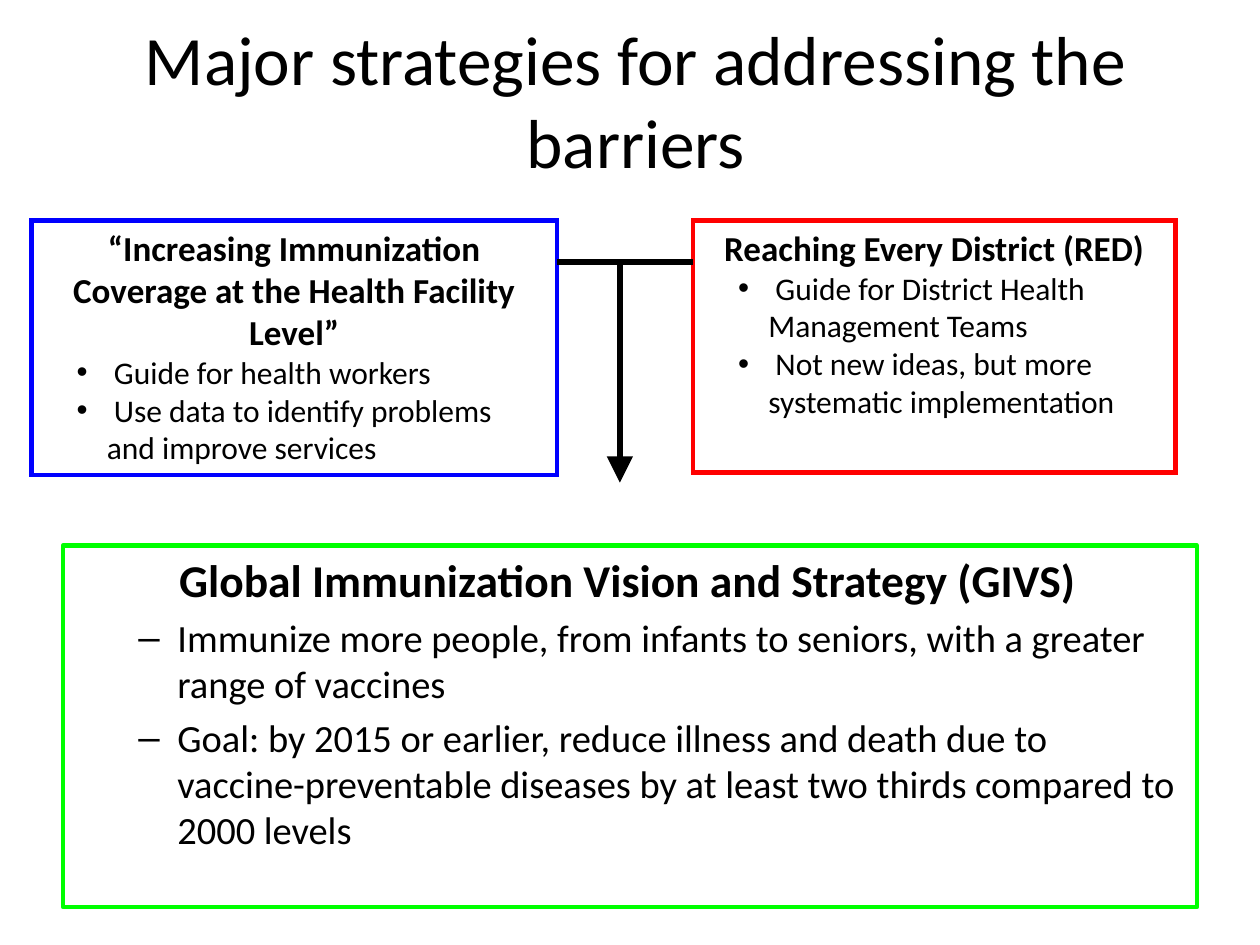
"""Build the slide on major strategies for addressing immunization barriers."""
import lxml.etree
import pptx
import pptx.dml.color
import pptx.enum.shapes
import pptx.enum.text
import pptx.oxml.ns
import pptx.util

Inches = pptx.util.Inches
Pt = pptx.util.Pt
qn = pptx.oxml.ns.qn
ALIGN = pptx.enum.text.PP_ALIGN
ANCHOR = pptx.enum.text.MSO_ANCHOR

FONT = "Calibri"
BLACK = pptx.dml.color.RGBColor(0, 0, 0)
BLUE = pptx.dml.color.RGBColor(0, 0, 255)
RED = pptx.dml.color.RGBColor(255, 0, 0)
GREEN = pptx.dml.color.RGBColor(0, 255, 0)


def add_run(p, text, size, bold=False):
    """Add one black run to a paragraph."""
    r = p.add_run()
    r.text = text
    r.font.name = FONT
    r.font.size = Pt(size)
    r.font.bold = bold
    r.font.color.rgb = BLACK


prs = pptx.Presentation()
prs.slide_width = Inches(10)
prs.slide_height = Inches(7.5)
s = prs.slides.add_slide(prs.slide_layouts[5])

title = s.shapes.title
title.left, title.top = Inches(0.92), Inches(0.25)
title.width, title.height = Inches(8.25), Inches(1.08)
tf = title.text_frame
tf.word_wrap = True
tf.auto_size = pptx.enum.text.MSO_AUTO_SIZE.NONE
tf.vertical_anchor = ANCHOR.MIDDLE
p = tf.paragraphs[0]
p.alignment = ALIGN.CENTER
add_run(p, "Major strategies for addressing the barriers", 39.6)

boxes = [
    ((0.5, 4.33, 9, 2.87), 0.13, GREEN, 26, 22, "–", 0.81, -0.31, 0.2,
     "Global Immunization Vision and Strategy (GIVS)",
     ["Immunize more people, from infants to seniors, with a greater range of vaccines",
      "Goal: by 2015 or earlier, reduce illness and death due to vaccine-preventable "
      "diseases by at least two thirds compared to 2000 levels"]),
    ((5.5, 1.75, 3.83, 2), 0.1, RED, 20, 18, "•", 0.5, -0.24, 0,
     "Reaching Every District (RED)",
     [" Guide for District Health Management Teams",
      " Not new ideas, but more systematic implementation"]),
    ((0.25, 1.75, 4.17, 2.02), 0.1, BLUE, 20, 18, "•", 0.5, -0.24, 0,
     "“Increasing Immunization Coverage at the Health Facility Level”",
     [" Guide for health workers",
      " Use data to identify problems and improve services"]),
]
for place, inset, color, head_size, size, bullet, margin, indent, gap, heading, points in boxes:
    sp = s.shapes.add_shape(pptx.enum.shapes.MSO_SHAPE.RECTANGLE, *map(Inches, place))
    sp.shadow.inherit = False
    sp.fill.background()
    sp.line.color.rgb = color
    sp.line.width = Pt(2.5)
    if color != GREEN:
        ln = sp._element.spPr.find(qn("a:ln"))
        lxml.etree.SubElement(ln, qn("a:miter")).set("lim", "800000")
    tf = sp.text_frame
    tf.word_wrap = True
    tf.vertical_anchor = ANCHOR.TOP
    tf.margin_right = Inches(inset)
    p = tf.paragraphs[0]
    p.alignment = ALIGN.CENTER
    p.space_before = Pt(gap * head_size)
    add_run(p, heading, head_size, True)
    for point in points:
        p = tf.add_paragraph()
        p.level = 1
        p.alignment = ALIGN.LEFT
        p.space_before = Pt(gap * size)
        pPr = p._p.get_or_add_pPr()
        pPr.set("marL", str(Inches(margin)))
        pPr.set("indent", str(Inches(indent)))
        lxml.etree.SubElement(pPr, qn("a:buFont")).set("typeface", "Arial")
        lxml.etree.SubElement(pPr, qn("a:buChar")).set("char", bullet)
        add_run(p, point, size)

lines = [
    ((4.42, 2.08, 5.5, 2.08), 3.25, False),
    ((4.92, 2.08, 4.92, 3.83), 3, True),
]
for ends, width, has_arrow in lines:
    cxn = s.shapes.add_connector(pptx.enum.shapes.MSO_CONNECTOR.STRAIGHT, *map(Inches, ends))
    cxn.line.color.rgb = BLACK
    cxn.line.width = Pt(width)
    if has_arrow:
        tail = lxml.etree.SubElement(cxn._element.spPr.find(qn("a:ln")), qn("a:tailEnd"))
        for key, value in (("type", "triangle"), ("w", "lg"), ("len", "lg")):
            tail.set(key, value)
    lxml.etree.SubElement(cxn._element.spPr, qn("a:effectLst"))

prs.save("out.pptx")
